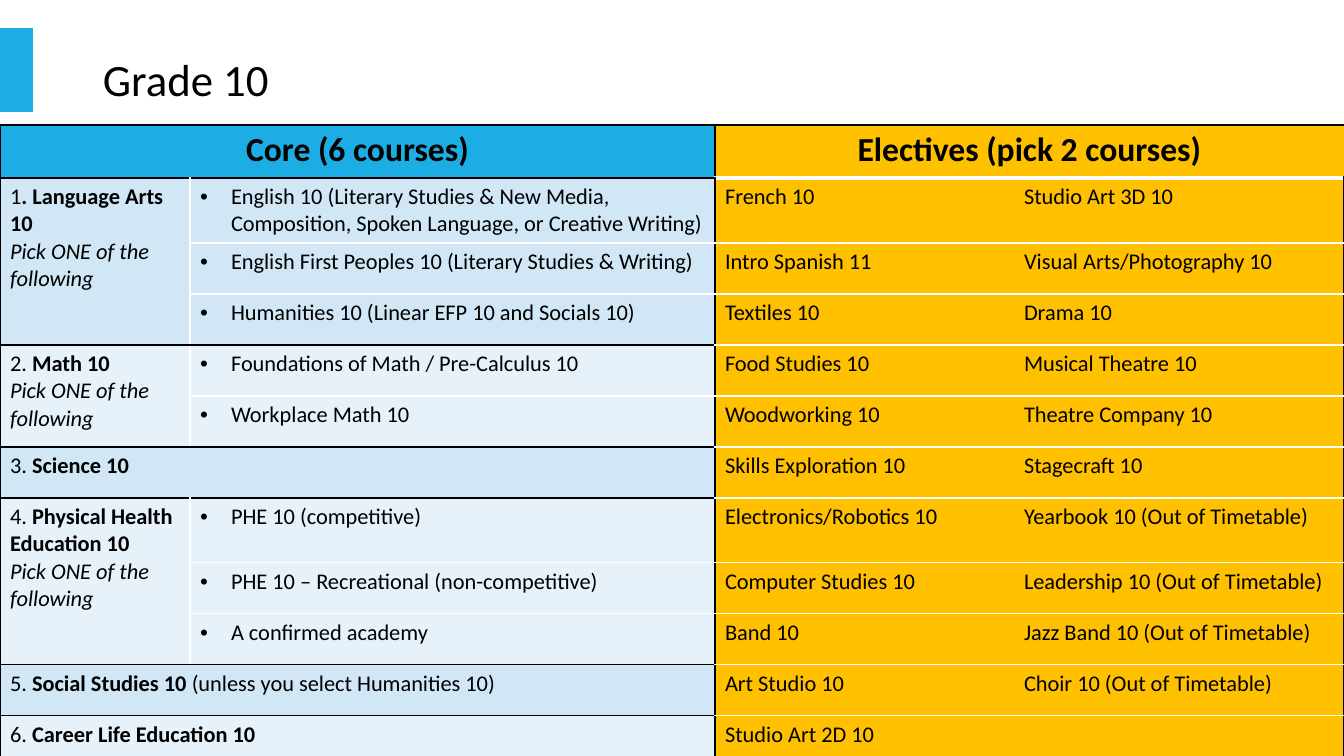
from dataclasses import dataclass

from lxml.etree import SubElement
from pptx import Presentation
from pptx.dml.color import RGBColor
from pptx.enum.shapes import MSO_SHAPE as Shape
from pptx.enum.text import MSO_ANCHOR as Anchor, PP_ALIGN as Align
from pptx.oxml.ns import qn
from pptx.util import Emu, Pt

SLIDE_WIDTH, SLIDE_HEIGHT = 1344, 756
EMU_PER_PX = 12192000 / SLIDE_WIDTH

BLACK = RGBColor(0x00, 0x00, 0x00)
WHITE = RGBColor(0xFF, 0xFF, 0xFF)
BLUE = RGBColor(0x1C, 0xAD, 0xE4)
GOLD = RGBColor(0xFF, 0xC0, 0x00)
CORE_BANDS = (RGBColor(0xD1, 0xE7, 0xF6), RGBColor(0xE7, 0xF1, 0xFA))
FONT = "Calibri"

TABLE_TOP = 125
COLUMN_WIDTHS = (190, 525, 299, 330)
ROW_HEIGHTS = (53, 65) + (51,) * 5 + (65,) + (51,) * 3 + (53,)
BULLET_INDENT = 31


@dataclass(frozen=True)
class Subject:
    number: str
    name: str
    note: str = ""
    options: tuple[str, ...] = ()


@dataclass(frozen=True)
class Border:
    color: RGBColor
    width: float


THIN_WHITE, THICK_WHITE = Border(WHITE, 1), Border(WHITE, 3)
THIN_BLACK, THICK_BLACK = Border(BLACK, 1), Border(BLACK, 2.25)

SUBJECTS = (
    Subject("1", ". Language Arts 10", options=(
        "English 10 (Literary Studies & New Media, Composition, "
        "Spoken Language, or Creative Writing)",
        "English First Peoples 10 (Literary Studies & Writing)",
        "Humanities 10 (Linear EFP 10 and Socials 10)")),
    Subject("2. ", "Math 10", options=(
        "Foundations of Math / Pre-Calculus 10", "Workplace Math 10")),
    Subject("3. ", "Science 10"),
    Subject("4. ", "Physical Health Education 10", options=(
        "PHE 10 (competitive)",
        "PHE 10 – Recreational (non-competitive)",
        "A confirmed academy")),
    Subject("5. ", "Social Studies 10 ", "(unless you select Humanities 10)"),
    Subject("6. ", "Career Life Education 10"),
)
ELECTIVES = (
    ("French 10", "Studio Art 3D 10"),
    ("Intro Spanish 11", "Visual Arts/Photography 10"),
    ("Textiles 10", "Drama 10"),
    ("Food Studies 10", "Musical Theatre 10"),
    ("Woodworking 10", "Theatre Company 10"),
    ("Skills Exploration 10", "Stagecraft 10"),
    ("Electronics/Robotics 10", "Yearbook 10 (Out of Timetable)"),
    ("Computer Studies 10", "Leadership 10 (Out of Timetable)"),
    ("Band 10", "Jazz Band 10 (Out of Timetable)"),
    ("Art Studio 10", "Choir 10 (Out of Timetable)"),
    ("Studio Art 2D 10", ""),
)


def px(length: int) -> Emu:
    return Emu(round(length * EMU_PER_PX))


def style_run(run, size: int = 16, bold: bool = False, italic: bool = False) -> None:
    font = run.font
    font.name, font.size = FONT, Pt(size)
    font.bold, font.italic = bold, italic
    font.color.rgb = BLACK


def add_run(paragraph, text: str, bold: bool = False, italic: bool = False) -> None:
    run = paragraph.add_run()
    run.text = text
    style_run(run, bold=bold, italic=italic)


def write_cell(cell, text: str, size: int = 16, bold: bool = False,
               align: Align = Align.LEFT) -> None:
    cell.text_frame.text = text
    paragraph = cell.text_frame.paragraphs[0]
    paragraph.alignment = align
    for run in paragraph.runs:
        style_run(run, size, bold)


def write_option(cell, text: str) -> None:
    write_cell(cell, text)
    properties = cell.text_frame.paragraphs[0]._p.get_or_add_pPr()
    properties.set("marL", str(px(BULLET_INDENT)))
    properties.set("indent", str(-px(BULLET_INDENT)))
    SubElement(properties, qn("a:buFont"), typeface="Arial")
    SubElement(properties, qn("a:buChar"), char="•")


def write_subject(cell, subject: Subject) -> None:
    paragraph = cell.text_frame.paragraphs[0]
    add_run(paragraph, subject.number)
    add_run(paragraph, subject.name, bold=True)
    if subject.note:
        add_run(paragraph, subject.note)
    if subject.options:
        add_run(cell.text_frame.add_paragraph(), "Pick ONE of the following", italic=True)


def draw_cell(cell, fill: RGBColor, left: Border | None, right: Border | None,
              top: Border | None, bottom: Border | None) -> None:
    properties = cell._tc.get_or_add_tcPr()
    for side, border in zip("LRTB", (left, right, top, bottom)):
        line = SubElement(properties, qn(f"a:ln{side}"))
        if border is None:
            line.set("w", "0")
            SubElement(line, qn("a:noFill"))
        else:
            line.set("w", str(Pt(border.width)))
            solid = SubElement(line, qn("a:solidFill"))
            SubElement(solid, qn("a:srgbClr"), val=str(border.color))
    cell.fill.solid()
    cell.fill.fore_color.rgb = fill


def fill_header(table) -> None:
    headings = (("Core (6 courses)", BLUE, THIN_BLACK),
                ("Electives (pick 2 courses)", GOLD, THICK_WHITE))
    for column, (text, fill, bottom) in zip((0, 2), headings):
        first, second = table.cell(0, column), table.cell(0, column + 1)
        first.merge(second)
        write_cell(first, text, 24, True, Align.CENTER)
        draw_cell(first, fill, THICK_BLACK, None, THICK_BLACK, bottom)
        draw_cell(second, fill, None, THICK_BLACK, THICK_BLACK, bottom)


def fill_core(table) -> None:
    row = 1
    for index, subject in enumerate(SUBJECTS):
        count = max(1, len(subject.options))
        last = row + count - 1
        heading = table.cell(row, 0)
        heading.merge(table.cell(last, 0 if subject.options else 1))
        write_subject(heading, subject)
        divider = THIN_WHITE if subject.options else None
        end = THICK_BLACK if subject is SUBJECTS[-1] else THIN_BLACK
        fill = CORE_BANDS[index % 2]
        for current in range(row, last + 1):
            is_first, is_last = current == row, current == last
            draw_cell(table.cell(current, 0), fill, THICK_BLACK, divider,
                      THIN_BLACK if is_first else None, end if is_last else None)
            draw_cell(table.cell(current, 1), fill, divider, THIN_BLACK,
                      THIN_BLACK if is_first else THIN_WHITE,
                      end if is_last else THIN_WHITE)
        for offset, option in enumerate(subject.options):
            write_option(table.cell(row + offset, 1), option)
        row += count


def fill_electives(table) -> None:
    for row, courses in enumerate(ELECTIVES, start=1):
        top = THICK_WHITE if row == 1 else THIN_WHITE
        bottom = THICK_BLACK if row == len(ELECTIVES) else THIN_WHITE
        for column, course in enumerate(courses, start=2):
            cell = table.cell(row, column)
            write_cell(cell, course)
            left, right = (THIN_BLACK, None) if column == 2 else (None, THICK_BLACK)
            draw_cell(cell, GOLD, left, right, top, bottom)


def main() -> None:
    presentation = Presentation()
    presentation.slide_width, presentation.slide_height = px(SLIDE_WIDTH), px(SLIDE_HEIGHT)
    slide = presentation.slides.add_slide(presentation.slide_layouts[6])

    # Accent bar beside the title
    accent = slide.shapes.add_shape(Shape.RECTANGLE, px(0), px(28), px(33), px(84))
    accent.shadow.inherit = False
    accent.fill.solid()
    accent.fill.fore_color.rgb = BLUE
    accent.line.fill.background()

    # Title
    title = slide.shapes.add_textbox(px(93), px(9), px(1159), px(146))
    frame = title.text_frame
    frame.word_wrap = True
    frame.vertical_anchor = Anchor.MIDDLE
    frame.text = "Grade 10"
    frame.paragraphs[0].line_spacing = 0.9
    style_run(frame.paragraphs[0].runs[0], 32)

    # Course table
    table = slide.shapes.add_table(
        len(ROW_HEIGHTS), len(COLUMN_WIDTHS), px(0), px(TABLE_TOP),
        px(sum(COLUMN_WIDTHS)), px(sum(ROW_HEIGHTS))).table
    table.first_row = table.horz_banding = False
    for column, width in zip(table.columns, COLUMN_WIDTHS):
        column.width = px(width)
    for row, height in zip(table.rows, ROW_HEIGHTS):
        row.height = px(height)
    fill_header(table)
    fill_core(table)
    fill_electives(table)

    presentation.save("out.pptx")


if __name__ == "__main__":
    main()
